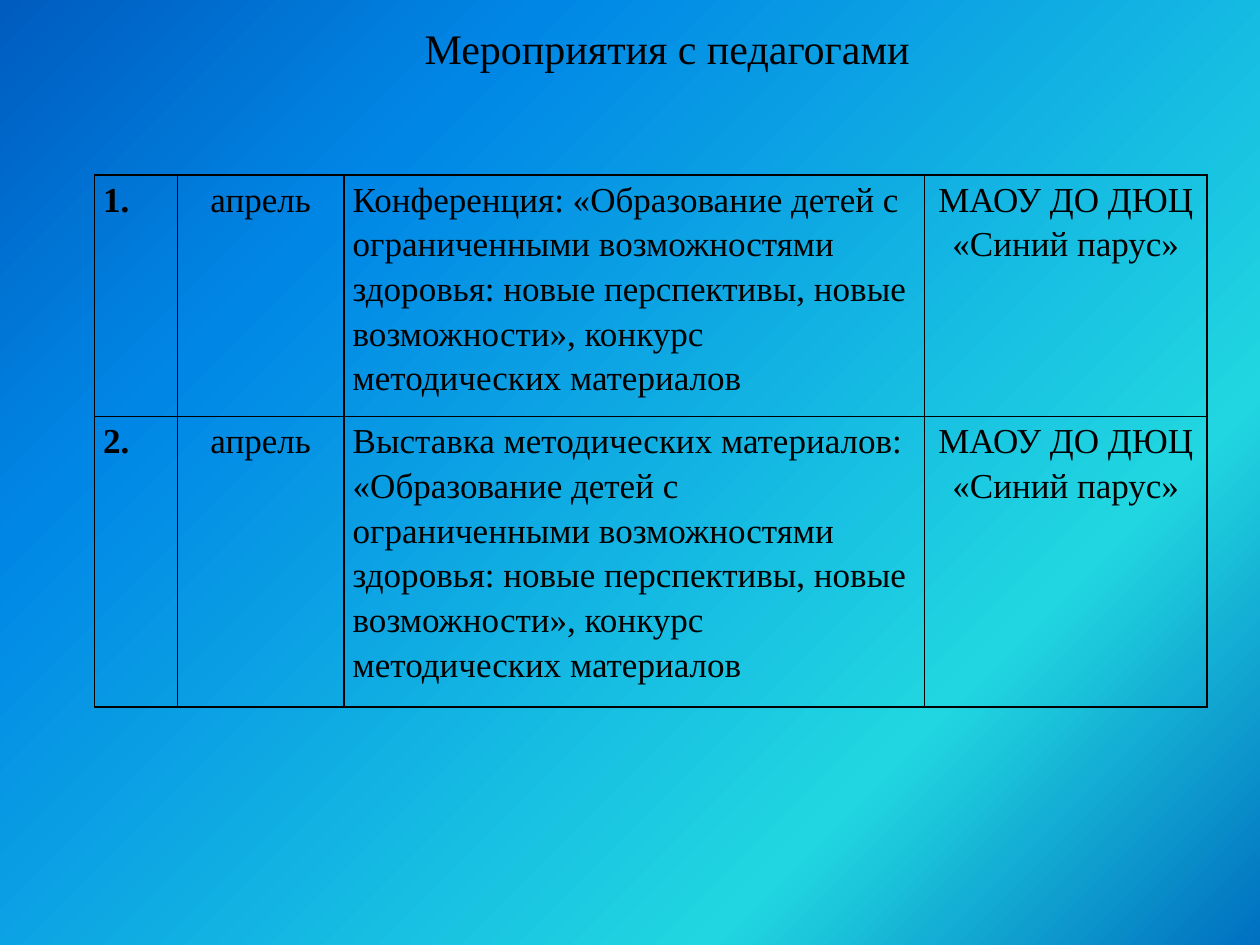
import dataclasses

import lxml.etree
import pptx
import pptx.dml.color
import pptx.enum.text
import pptx.oxml.ns
import pptx.util

Cm = pptx.util.Cm
Pt = pptx.util.Pt
qn = pptx.oxml.ns.qn
ALIGN = pptx.enum.text.PP_ALIGN

FONT = "Times New Roman"
BLACK = "000000"
BACKGROUND_STOPS = [(0, "005CBF"), (25, "0087E6"), (75, "21D6E0"), (100, "0070C0")]
COLUMN_WIDTHS = [1.68, 3.35, 11.71, 5.69]
VENUE = "МАОУ ДО ДЮЦ\n«Синий парус»"
TOPIC = (
    "«Образование детей с ограниченными возможностями здоровья: "
    "новые перспективы, новые возможности», конкурс методических материалов"
)


@dataclasses.dataclass
class Event:
    number: str
    month: str
    description: str
    venue: str
    height: float


EVENTS = [
    Event("1.", "апрель", f"Конференция: {TOPIC}", VENUE, 4.86),
    Event("2.", "апрель", f"Выставка методических материалов: {TOPIC}", VENUE, 5.85),
]


def hex_color(value: str) -> pptx.dml.color.RGBColor:
    return pptx.dml.color.RGBColor.from_string(value)


def add_solid_color(parent, value: str) -> None:
    lxml.etree.SubElement(parent, qn("a:srgbClr"), val=str(hex_color(value)))


def write_text(text_frame, text: str, *, size: float, bold: bool = False,
               align=ALIGN.LEFT, line_spacing: float = 1.0, color: str = BLACK) -> None:
    for index, line in enumerate(text.split("\n")):
        paragraph = text_frame.add_paragraph() if index else text_frame.paragraphs[0]
        paragraph.alignment = align
        paragraph.line_spacing = line_spacing
        run = paragraph.add_run()
        run.text = line
        run.font.name = FONT
        run.font.size = Pt(size)
        run.font.bold = bold
        run.font.color.rgb = hex_color(color)


def paint_background(slide) -> None:
    fill = slide.background.fill
    fill.gradient()
    fill.gradient_angle = 315
    stop_list = next(slide.element.iter(qn("a:gsLst")))
    for stop in list(stop_list):
        stop_list.remove(stop)
    for position, color in BACKGROUND_STOPS:
        stop = lxml.etree.SubElement(stop_list, qn("a:gs"), pos=str(position * 1000))
        add_solid_color(stop, color)


def add_title(slide, text: str) -> None:
    title = slide.shapes.add_textbox(Cm(8.31), Cm(0.33), Cm(10.39), Cm(1.27))
    title.text_frame.word_wrap = False
    write_text(title.text_frame, text, size=24)


def format_cell(cell) -> None:
    cell.margin_left = cell.margin_right = Cm(0.18)
    cell.margin_top = cell.margin_bottom = 0
    properties = cell._tc.get_or_add_tcPr()
    for side in ("a:lnL", "a:lnR", "a:lnT", "a:lnB"):
        border = lxml.etree.SubElement(properties, qn(side), w=str(Pt(1)))
        add_solid_color(lxml.etree.SubElement(border, qn("a:solidFill")), BLACK)
    cell.fill.background()


def add_event_table(slide, events: list[Event]) -> None:
    table = slide.shapes.add_table(
        len(events), len(COLUMN_WIDTHS), Cm(1.9), Cm(3.53),
        Cm(sum(COLUMN_WIDTHS)), Cm(sum(event.height for event in events)),
    ).table
    table.first_row = table.horz_banding = False
    for column, width in zip(table.columns, COLUMN_WIDTHS):
        column.width = Cm(width)
    for row, event in zip(table.rows, events):
        row.height = Cm(event.height)
        contents = [
            (event.number, ALIGN.LEFT, True),
            (event.month, ALIGN.CENTER, False),
            (event.description, ALIGN.LEFT, False),
            (event.venue, ALIGN.CENTER, False),
        ]
        for cell, (text, align, bold) in zip(row.cells, contents):
            format_cell(cell)
            write_text(cell.text_frame, text, size=20, bold=bold,
                       align=align, line_spacing=1.15)


def main() -> None:
    presentation = pptx.Presentation()
    presentation.slide_width = Cm(25.4)
    presentation.slide_height = Cm(19.05)
    slide = presentation.slides.add_slide(presentation.slide_layouts[6])
    paint_background(slide)
    add_title(slide, "Мероприятия с педагогами")
    add_event_table(slide, EVENTS)
    presentation.save("out.pptx")


if __name__ == "__main__":
    main()
